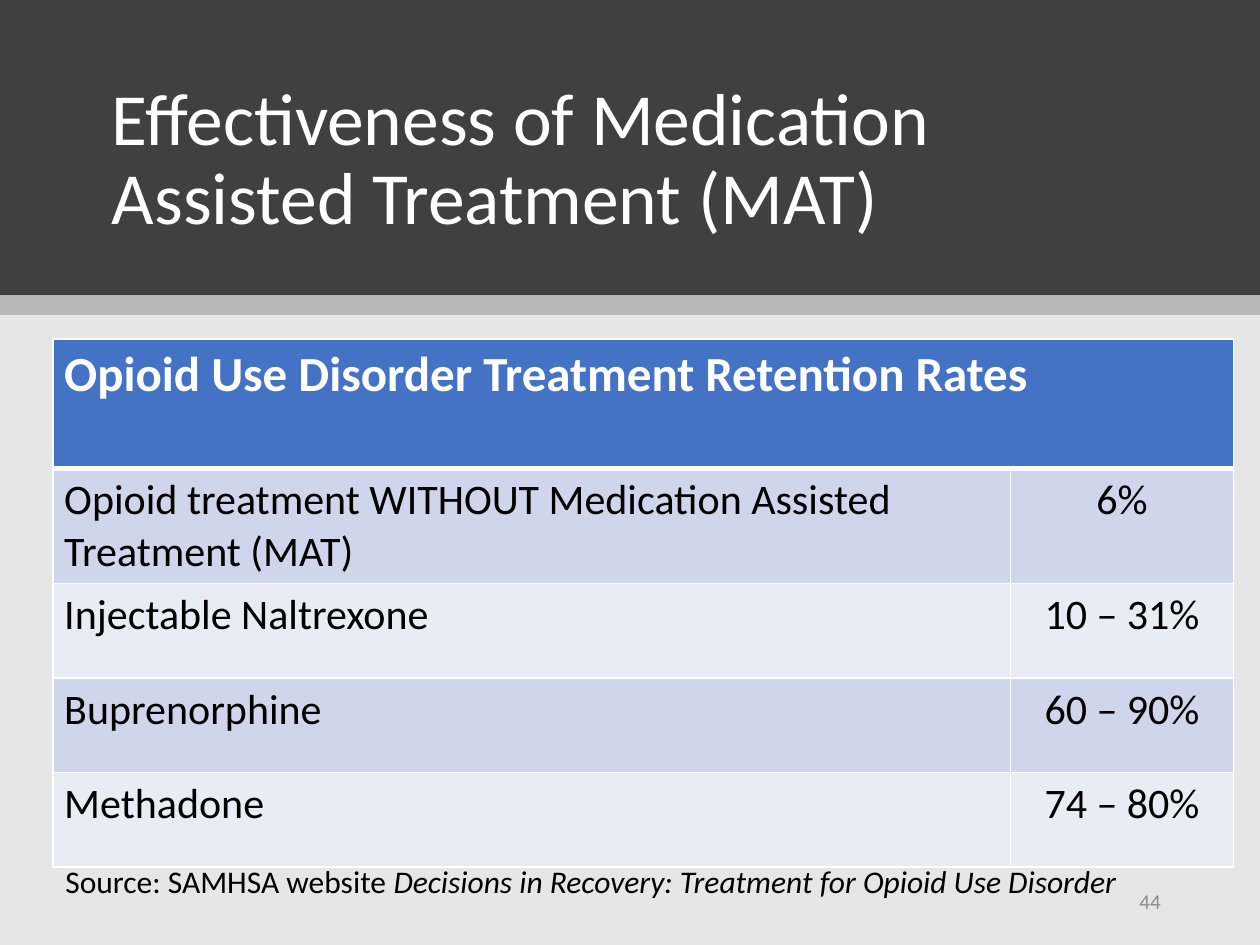
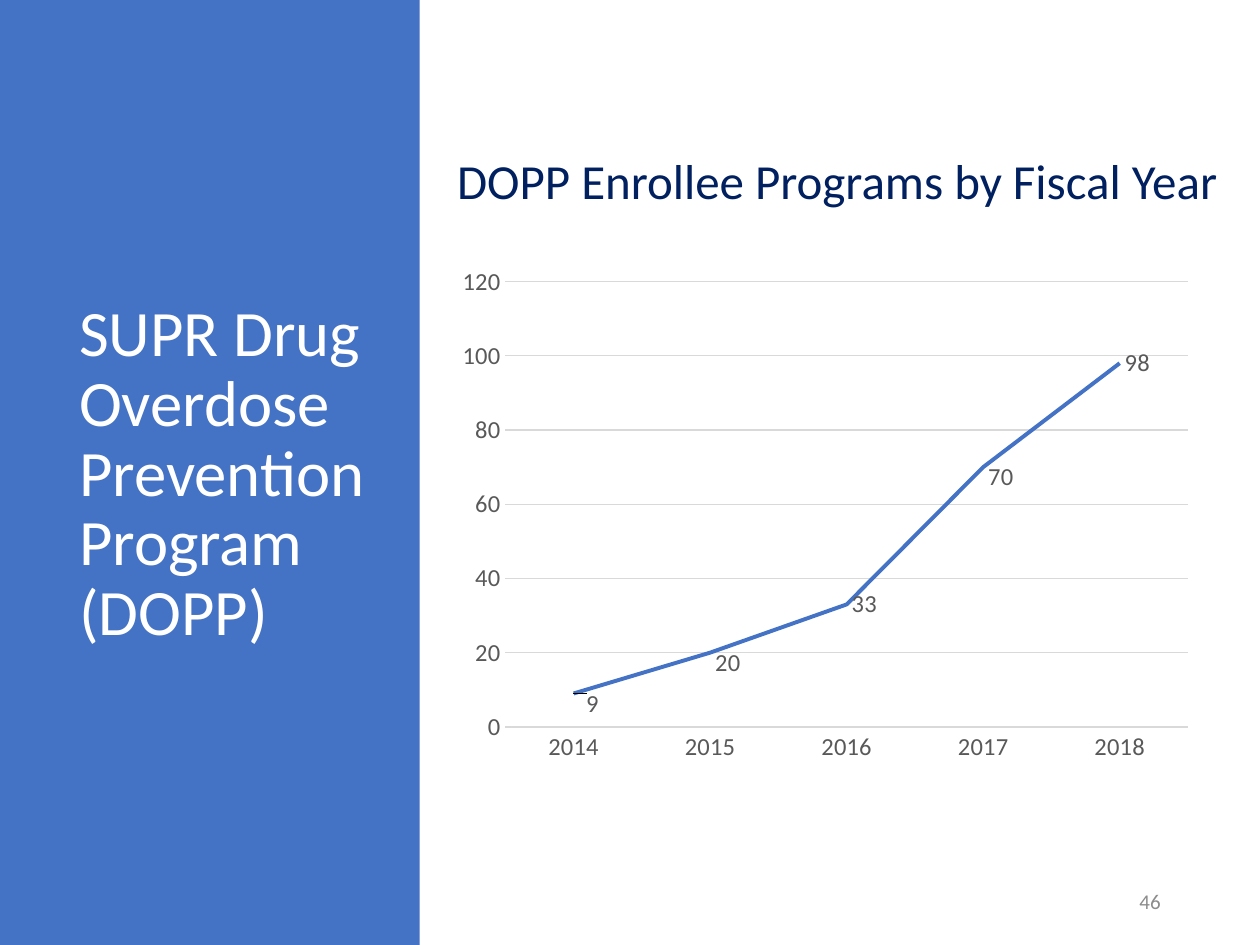
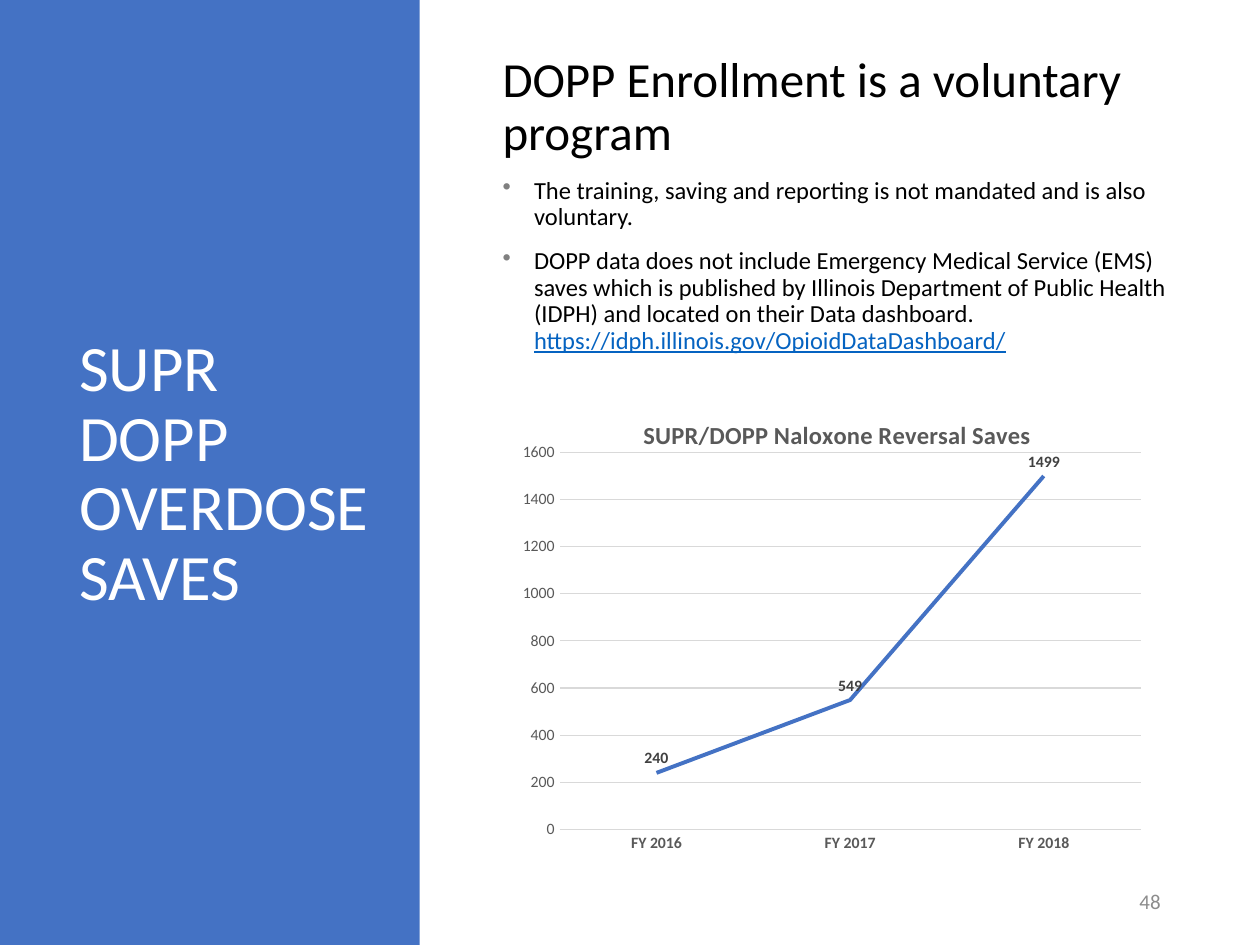
from dataclasses import dataclass

import pptx
import pptx.chart.data
import pptx.dml.color
import pptx.enum.chart
import pptx.enum.shapes
import pptx.enum.text
import pptx.oxml
import pptx.oxml.ns
import pptx.util
from pptx.util import Inches

ALIGN = pptx.enum.text.PP_ALIGN
ANCHOR = pptx.enum.text.MSO_ANCHOR
SPOT = pptx.enum.chart.XL_LABEL_POSITION
TICK = pptx.enum.chart.XL_TICK_MARK


@dataclass(frozen=True)
class Theme:
    face: str = "Calibri"
    blue: str = "4472C4"
    dark: str = "404040"
    pale: str = "E7E6E6"
    white: str = "FFFFFF"
    black: str = "000000"
    navy: str = "002060"
    link: str = "0563C1"
    gray: str = "8C8C8C"
    dot: str = "808080"
    axis: str = "595959"
    grid: str = "D9D9D9"
    rows: tuple = ("CFD5EA", "E9EBF5")
    banner: int = 42
    title: int = 37
    head: int = 28
    cell: int = 24
    source: int = 18
    body: int = 14
    number: int = 12
    small: int = 9


def rgb(code):
    return pptx.dml.color.RGBColor.from_string(code)


def markup(text, prefix):
    """Turn markup using one namespace prefix into an element."""
    tag, rest = text[:text.index(" ")], text[text.index(" "):]
    return pptx.oxml.parse_xml(f"{tag} {pptx.oxml.ns.nsdecls(prefix)}{rest}")


def place(parent, index, marks):
    """Give a chart part a manual layout, as its child at index."""
    for old in parent.findall(pptx.oxml.ns.qn("c:layout")):
        parent.remove(old)
    inner = "".join(f'<c:{key} val="{val}"/>' for key, val in marks.items())
    parent.insert(index, markup(
        f"<c:layout ><c:manualLayout>{inner}</c:manualLayout></c:layout>", "c"))


class Deck:
    """Holds the style and the current slide."""

    def __init__(self, theme):
        self.theme = theme
        self.file = pptx.Presentation()
        self.file.slide_width, self.file.slide_height = Inches(10), Inches(7.5)
        self.slide = None

    def start(self):
        self.slide = self.file.slides.add_slide(self.file.slide_layouts[6])

    def font(self, font, size, color, bold=None):
        font.name, font.size, font.bold = self.theme.face, pptx.util.Pt(size), bold
        font.color.rgb = rgb(color)

    def rect(self, left, top, width, height, color, alpha=None):
        kind = pptx.enum.shapes.MSO_SHAPE.RECTANGLE
        box = self.slide.shapes.add_shape(
            kind, Inches(left), Inches(top), Inches(width), Inches(height))
        box.shadow.inherit = False
        box.line.fill.background()
        box.fill.solid()
        box.fill.fore_color.rgb = rgb(color)
        if alpha:
            tint = box.element.spPr.find(".//" + pptx.oxml.ns.qn("a:srgbClr"))
            tint.append(markup(f'<a:alpha val="{alpha * 1000}"/>', "a"))

    def box(self, left, top, width, height, anchor=ANCHOR.TOP, foot=0.05):
        """Add an empty text frame; foot is its bottom inset."""
        frame = self.slide.shapes.add_textbox(
            Inches(left), Inches(top), Inches(width), Inches(height)).text_frame
        frame.word_wrap = True
        frame.vertical_anchor = anchor
        frame.margin_bottom = Inches(foot)
        return frame

    def words(self, para, text, size, color, bold=None, align=None, lead=None):
        """Set the text and style of a paragraph; lead is its line spacing."""
        para.text = text
        para.alignment, para.line_spacing = align, lead
        self.font(para.font, size, color, bold)

    def bullet(self, frame, text):
        para = frame.add_paragraph()
        props = para._p.get_or_add_pPr()
        props.set("marL", str(Inches(0.28)))
        props.set("indent", str(-Inches(0.25)))
        props.append(markup(f'<a:buClr ><a:srgbClr val="{self.theme.dot}"/></a:buClr>', "a"))
        props.append(markup('<a:buChar char="•"/>', "a"))
        self.words(para, text, self.theme.body, self.theme.black, lead=0.9)
        para.space_before = pptx.util.Pt(10)
        return para

    def number(self, value):
        frame = self.box(7.06, 6.95, 2.25, 0.4, ANCHOR.MIDDLE)
        self.words(frame.paragraphs[0], str(value), self.theme.number,
                   self.theme.gray, align=ALIGN.RIGHT)

    def banner(self, text):
        look = self.theme
        self.rect(0, 0, 10, 7.5, look.pale)
        self.rect(0, 0, 10, 2.34, look.dark)
        frame = self.box(0.79, 0.47, 8.43, 1.49, ANCHOR.BOTTOM)
        self.words(frame.paragraphs[0], text, look.banner, look.white, lead=0.9)
        self.rect(0, 2.34, 10, 0.16, look.black, alpha=20)

    def panel(self, text):
        self.rect(-0.01, 0, 3.34, 7.5, self.theme.blue)
        frame = self.box(0.53, 0.7, 2.54, 6.14, ANCHOR.MIDDLE)
        self.words(frame.paragraphs[0], text, self.theme.title, self.theme.white, lead=0.9)

    def cell(self, cell, text, fill, size, color, bold, align=None, base=1):
        """Fill one table cell; base is the width of its bottom border."""
        cell.margin_left = cell.margin_right = Inches(0.09)
        props = cell._tc.get_or_add_tcPr()
        for side, width in zip("LRTB", (1, 1, 1, base)):
            props.append(markup(
                f'<a:ln{side} w="{width * 12700}"><a:solidFill><a:srgbClr '
                f'val="{self.theme.white}"/></a:solidFill></a:ln{side}>', "a"))
        cell.fill.solid()
        cell.fill.fore_color.rgb = rgb(fill)
        self.words(cell.text_frame.paragraphs[0], text, size, color, bold, align)

    def table(self, left, top, widths, heights, head, rows):
        look = self.theme
        grid = self.slide.shapes.add_table(
            len(heights), len(widths), Inches(left), Inches(top),
            Inches(sum(widths)), Inches(sum(heights))).table
        for col, width in zip(grid.columns, widths):
            col.width = Inches(width)
        for row, height in zip(grid.rows, heights):
            row.height = Inches(height)
        grid.cell(0, 0).merge(grid.cell(0, len(widths) - 1))
        for col, text in enumerate([head] + [""] * (len(widths) - 1)):
            self.cell(grid.cell(0, col), text, look.blue, look.head, look.white, True, base=3)
        for row, texts in enumerate(rows):
            for col, text in enumerate(texts):
                self.cell(grid.cell(row + 1, col), text, look.rows[row % 2], look.cell,
                          look.black, False, ALIGN.CENTER if col else None)

    def chart(self, spot, data, top, step, plot, size, tone, bold, side):
        """Add a line chart; plot is its inner plot area as shares of the chart."""
        look = self.theme
        info = pptx.chart.data.CategoryChartData()
        info.categories = list(data)
        info.add_series("Series 1", list(data.values()))
        chart = self.slide.shapes.add_chart(
            pptx.enum.chart.XL_CHART_TYPE.LINE, *map(Inches, spot), info).chart
        chart.has_legend = chart.has_title = False
        self.font(chart.font, size, look.axis)
        for axis, heavy in ((chart.category_axis, bold), (chart.value_axis, False)):
            axis.major_tick_mark = axis.minor_tick_mark = TICK.NONE
            self.font(axis.tick_labels.font, size, look.axis, heavy)
        rule = chart.value_axis
        rule.minimum_scale, rule.maximum_scale, rule.major_unit = 0, top, step
        rule.has_major_gridlines = True
        rule.format.line.fill.background()
        for line in (rule.major_gridlines.format.line, chart.category_axis.format.line):
            line.color.rgb, line.width = rgb(look.grid), pptx.util.Pt(0.75)
        chart.plots[0].vary_by_categories = False
        series = chart.plots[0].series[0]
        series.smooth = False
        series.format.line.color.rgb = rgb(look.blue)
        series.format.line.width = pptx.util.Pt(2.25)
        labels = series.data_labels
        labels.show_value, labels.position = True, side
        self.font(labels.font, size, tone, bold)
        area = chart.element.find(".//" + pptx.oxml.ns.qn("c:plotArea"))
        place(area, 0, dict(layoutTarget="inner", xMode="edge", yMode="edge",
                            **dict(zip("xywh", plot))))
        return chart

    def nudge(self, chart, moves):
        """Shift single data labels by shares of the chart size."""
        points = chart.plots[0].series[0].points
        for index in moves:
            label = points[index].data_label
            label.position = SPOT.RIGHT
            self.font(label.font, self.theme.body, self.theme.axis)
        marks = chart.element.findall(".//" + pptx.oxml.ns.qn("c:dLbl"))
        for mark, (x, y) in zip(marks, moves.values()):
            place(mark, 1, dict(x=x, y=y))

    def caption(self, chart, text, x, y):
        chart.has_title = True
        para = chart.chart_title.text_frame.paragraphs[0]
        self.words(para, text, self.theme.body, self.theme.axis, True)
        chart.chart_title.include_in_layout = False
        title = chart.element.find(".//" + pptx.oxml.ns.qn("c:title"))
        place(title, 1, dict(xMode="edge", yMode="edge", x=x, y=y))


def rates(deck):
    look = deck.theme
    deck.start()
    deck.banner("Effectiveness of Medication Assisted Treatment (MAT)")
    deck.table(0.42, 2.69, (7.6, 1.77), (1.03, 0.91, 0.75, 0.75, 0.75),
               "Opioid Use Disorder Treatment Retention Rates", [
                   ("Opioid treatment WITHOUT Medication Assisted Treatment (MAT)", "6%"),
                   ("Injectable Naltrexone", "10 – 31%"),
                   ("Buprenorphine", "60 – 90%"),
                   ("Methadone", "74 – 80%")])
    para = deck.box(0.42, 6.79, 9.01, 0.4).paragraphs[0]
    deck.words(para, "Source: SAMHSA website ", look.source, look.black)
    work = para.add_run()
    work.text = "Decisions in Recovery: Treatment for Opioid Use Disorder"
    work.font.italic = True
    deck.number(44)


def growth(deck):
    look = deck.theme
    deck.start()
    deck.panel("SUPR Drug Overdose Prevention Program (DOPP)")
    frame = deck.box(3.53, 1.1, 6.31, 0.93, ANCHOR.MIDDLE, foot=0.26)
    deck.words(frame.paragraphs[0], "DOPP Enrollee Programs by Fiscal Year",
               look.head, look.navy, lead=0.9)
    data = {"2014": 9, "2015": 20, "2016": 33, "2017": 70, "2018": 98}
    chart = deck.chart((3.53, 2.03, 6.02, 4.11), data, 120, 20, (0.08, 0.05, 0.9, 0.86),
                       look.body, look.axis, False, SPOT.RIGHT)
    deck.nudge(chart, {0: (0.01, 0.02), 1: (0, 0.02), 3: (0, 0.02)})
    deck.number(46)


def saves(deck):
    look = deck.theme
    deck.start()
    deck.panel("SUPR DOPP\vOVERDOSE\vSAVES")
    frame = deck.box(3.86, 0.37, 5.62, 2.72, ANCHOR.MIDDLE, foot=0.26)
    lead = frame.paragraphs[0]
    lead._p.get_or_add_pPr().set("marL", str(Inches(0.03)))
    deck.words(lead, "DOPP Enrollment is a voluntary program", look.head, look.black, lead=0.9)
    deck.bullet(frame, "The training, saving and reporting is not mandated and is also voluntary.")
    para = deck.bullet(
        frame, "DOPP data does not include Emergency Medical Service (EMS) saves which is "
        "published by Illinois Department of Public Health (IDPH) and located on their "
        "Data dashboard. ")
    site = para.add_run()
    site.text = "https://idph.illinois.gov/OpioidDataDashboard/"
    site.font.underline = True
    site.font.color.rgb = rgb(look.link)
    data = {"FY 2016": 240, "FY 2017": 549, "FY 2018": 1499}
    chart = deck.chart((3.97, 3.09, 5.24, 3.84), data, 1600, 200, (0.09, 0.13, 0.88, 0.78),
                       look.small, look.dark, True, SPOT.ABOVE)
    deck.caption(chart, "SUPR/DOPP Naloxone Reversal Saves", 0.21, 0.05)
    deck.number(48)


def main():
    deck = Deck(Theme())
    for build in (rates, growth, saves):
        build(deck)
    deck.file.save("out.pptx")


if __name__ == "__main__":
    main()
